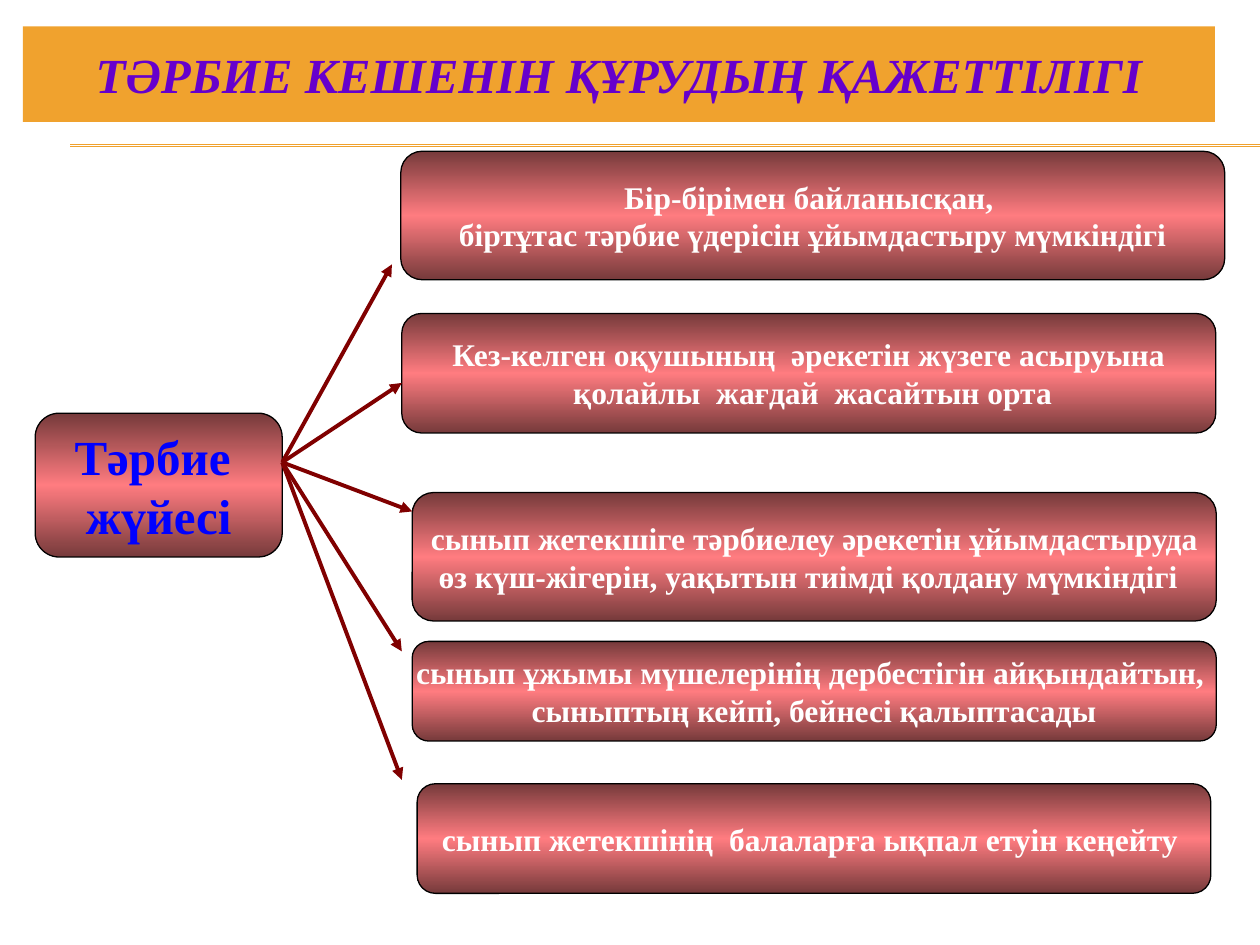
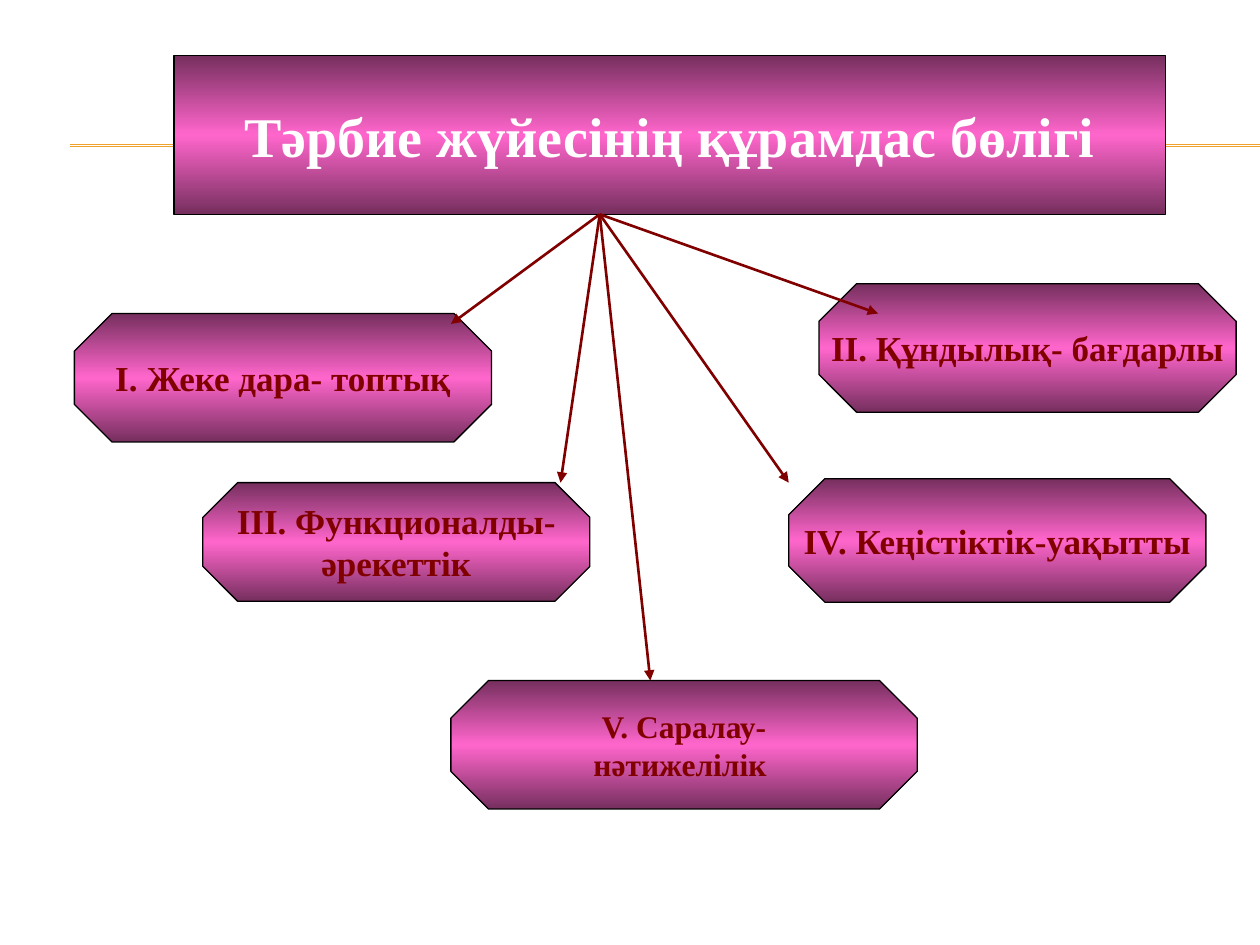
from copy import deepcopy

from lxml.etree import SubElement
from pptx import Presentation
from pptx.dml.color import RGBColor
from pptx.enum.shapes import MSO_CONNECTOR, MSO_SHAPE
from pptx.enum.text import MSO_ANCHOR, MSO_AUTO_SIZE, PP_ALIGN
from pptx.oxml.ns import qn
from pptx.util import Cm, Pt

# Shared look
FONT = "Times New Roman"
GOLD, MAROON, WHITE, BLACK = "F0A22E", "800000", "FFFFFF", "000000"
PURPLE, BLUE = "6600CC", "0000FF"
CORAL = ("763A3B", "FF7C80")  # edge and middle of a gradient
PINK = ("762F5E", "FF66CC")

# Slide 1: boxes as (left, top, width, height), arrow tip, text, alignment
NEEDS = [
    ((8.08, 3.05, 16.61, 2.59), (7.9, 5.33),
     "Бір-бірімен байланысқан, \nбіртұтас тәрбие үдерісін ұйымдастыру мүмкіндігі", PP_ALIGN.CENTER),
    ((8.1, 6.32, 16.41, 2.41), (8.1, 7.72),
     "Кез-келген оқушының  әрекетін жүзеге асыруына\n қолайлы  жағдай  жасайтын орта", PP_ALIGN.CENTER),
    ((8.31, 9.93, 16.21, 2.59), (8.31, 10.31),
     "сынып жетекшіге тәрбиелеу әрекетін ұйымдастыруда\n"
     " өз күш-жігерін, уақытын тиімді қолдану мүмкіндігі", PP_ALIGN.LEFT),
    ((8.31, 12.93, 16.21, 2.01), (8.1, 13.13),
     "сынып ұжымы мүшелерінің дербестігін айқындайтын, \n"
     "сыныптың кейпі, бейнесі қалыптасады", PP_ALIGN.CENTER),
    ((8.41, 15.8, 16, 2.21), (8.1, 15.72),
     "сынып жетекшінің  балаларға ықпал етуін кеңейту ", PP_ALIGN.CENTER),
]

# Slide 2: boxes, arrow tip, text, text size
PARTS = [
    ((1.5, 6.32, 8.41, 2.59), (9.09, 6.53), "I. Жеке дара- топтық", 20),
    ((4.09, 9.73, 7.8, 2.39), (11.3, 9.73), "III. Функционалды-\nәрекеттік", 20),
    ((16.51, 5.72, 8.41, 2.59), (17.7, 6.32), "II. Құндылық- бағдарлы", 20),
    ((15.9, 9.65, 8.41, 2.49), (15.9, 9.73), "IV. Кеңістіктік-уақытты", 20),
    ((9.09, 13.72, 9.4, 2.59), (13.11, 13.72), "V. Саралау-\nнәтижелілік ", 18),
]


def rgb(color):
    return RGBColor.from_string(color)


def set_text(sp, text, size, color, align=PP_ALIGN.CENTER, italic=False, wrap=False):
    tf = sp.text_frame
    tf.text = text
    tf.auto_size = MSO_AUTO_SIZE.NONE
    tf.word_wrap = wrap
    tf.vertical_anchor = MSO_ANCHOR.MIDDLE
    for p in tf.paragraphs:
        p.alignment = align
        for r in p.runs:
            r.font.name, r.font.size = FONT, Pt(size)
            r.font.bold, r.font.italic = True, italic
            r.font.color.rgb = rgb(color)


def paint_box(sp, colors):
    """Vertical gradient, dark at both edges, with a thin black outline."""
    edge, middle = colors
    sp.fill.gradient()
    sp.fill.gradient_angle = 90
    gs = sp.fill.gradient_stops[0]._gs
    gs.getparent().append(deepcopy(gs))
    for stop, position, color in zip(sp.fill.gradient_stops, (0, 0.5, 1), (edge, middle, edge)):
        stop.position = position
        stop.color.rgb = rgb(color)
    sp.line.color.rgb = rgb(BLACK)
    sp.line.width = Pt(0.75)


def add_box(slide, kind, box, colors, text, size, color, align=PP_ALIGN.CENTER):
    sp = slide.shapes.add_shape(kind, *map(Cm, box))
    sp.shadow.inherit = False
    paint_box(sp, colors)
    set_text(sp, text, size, color, align)


def place_title(slide, box):
    sp = slide.shapes.title
    sp.left, sp.top, sp.width, sp.height = map(Cm, box)
    return sp


def add_line(slide, start, end, color, width, arrow=False):
    line = slide.shapes.add_connector(MSO_CONNECTOR.STRAIGHT, *map(Cm, start + end))
    line.line.color.rgb = rgb(color)
    line.line.width = Pt(width)
    if arrow:
        SubElement(line.line._get_or_add_ln(), qn("a:tailEnd"), type="triangle")
    SubElement(line._element.spPr, qn("a:effectLst"))
    return line


def add_layout_rule(slide):
    """Draw the double gold rule and move it to the layout behind every slide."""
    for y in (2.92, 2.95):
        line = add_line(slide, (1.42, y), (25.4, y), GOLD, 0.75)
        slide.slide_layout.shapes._spTree.append(line._element)


def build_needs(slide):
    title = place_title(slide, (0.46, 0.53, 24.03, 1.93))
    title.fill.solid()
    title.fill.fore_color.rgb = rgb(GOLD)
    set_text(title, "ТӘРБИЕ КЕШЕНІН ҚҰРУДЫҢ ҚАЖЕТТІЛІГІ", 28, PURPLE, italic=True, wrap=True)

    add_box(slide, MSO_SHAPE.ROUNDED_RECTANGLE, (0.71, 8.33, 4.98, 2.9), CORAL,
            "Тәрбие \nжүйесі", 28, BLUE)
    for box, tip, text, align in NEEDS:
        add_box(slide, MSO_SHAPE.ROUNDED_RECTANGLE, box, CORAL, text, 18, WHITE, align)
        add_line(slide, (5.69, 9.32), tip, MAROON, 2.25, arrow=True)


def build_parts(slide):
    # Title placeholder shaped as an octagon
    title = place_title(slide, (3.51, 1.12, 19.99, 3.2))
    geom = SubElement(title._element.spPr, qn("a:prstGeom"), prst="octagon")
    SubElement(geom, qn("a:avLst"))
    paint_box(title, PINK)
    set_text(title, "Тәрбие жүйесінің құрамдас бөлігі", 32, WHITE)

    for box, _, text, size in PARTS:
        add_box(slide, MSO_SHAPE.OCTAGON, box, PINK, text, size, MAROON)
    # Arrows lie over all boxes
    for _, tip, _, _ in PARTS:
        add_line(slide, (12.09, 4.32), tip, MAROON, 1.5, arrow=True)


def main():
    prs = Presentation()
    prs.slide_width, prs.slide_height = Cm(25.4), Cm(19.05)
    title_only = prs.slide_layouts[5]
    needs, parts = [prs.slides.add_slide(title_only) for _ in range(2)]
    add_layout_rule(needs)
    build_needs(needs)
    build_parts(parts)
    prs.save("out.pptx")


if __name__ == "__main__":
    main()
